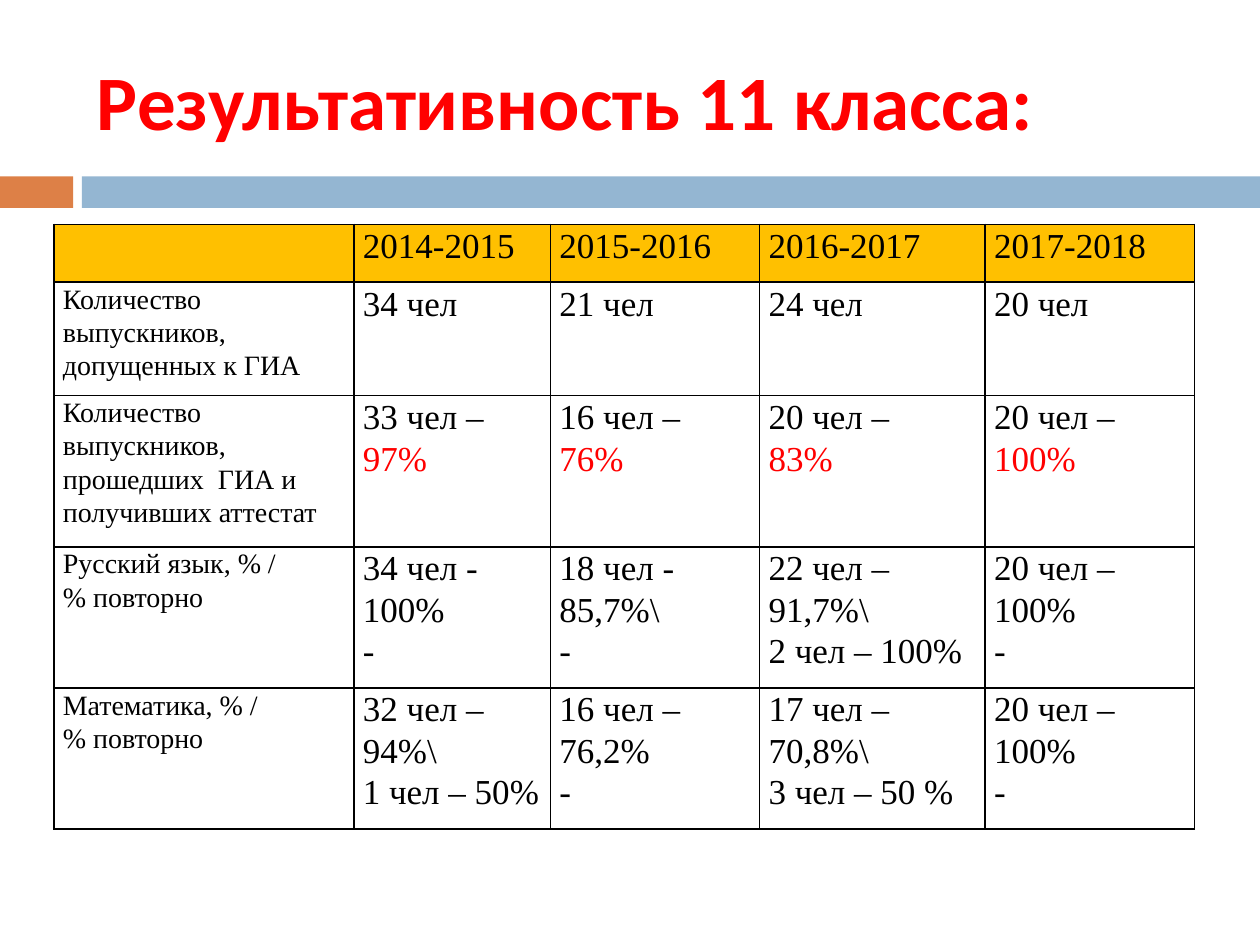
import dataclasses

import lxml.etree
import pptx
import pptx.dml.color
import pptx.enum.shapes
import pptx.enum.text
import pptx.oxml.ns
import pptx.util


@dataclasses.dataclass(frozen=True)
class Theme:
    heading_font: str = "Calibri"
    body_font: str = "Times New Roman"
    title_size: int = 44
    value_size: int = 20
    label_size: int = 16
    ink: str = "000000"
    accent: str = "FF0000"
    paper: str = "FFFFFF"
    header: str = "FFC000"
    orange: str = "DD8047"
    blue: str = "94B6D2"
    line_spacing: float = 1.07
    border_width: int = 1


class Deck:
    """Places elements on a grid of 100 columns by 75 rows."""

    COLUMNS, ROWS = 100, 75

    def __init__(self, theme):
        self.theme = theme
        self.presentation = pptx.Presentation()
        self.presentation.slide_width = pptx.util.Inches(10)
        self.presentation.slide_height = pptx.util.Inches(7.5)
        self.slide = self.presentation.slides.add_slide(self.presentation.slide_layouts[6])

    def across(self, columns):
        return round(self.presentation.slide_width * columns / self.COLUMNS)

    def down(self, rows):
        return round(self.presentation.slide_height * rows / self.ROWS)

    def box(self, left, top, width, height):
        return self.across(left), self.down(top), self.across(width), self.down(height)

    def run(self, paragraph, words, font, size, color, bold=False):
        run = paragraph.add_run()
        run.text = words
        run.font.name = font
        run.font.size = pptx.util.Pt(size)
        run.font.bold = bold
        run.font.color.rgb = pptx.dml.color.RGBColor.from_string(color)

    def band(self, left, top, width, height, color):
        band = self.slide.shapes.add_shape(
            pptx.enum.shapes.MSO_SHAPE.RECTANGLE, *self.box(left, top, width, height))
        band.shadow.inherit = False
        band.fill.solid()
        band.fill.fore_color.rgb = pptx.dml.color.RGBColor.from_string(color)
        band.line.fill.background()

    def title(self, left, top, width, height, words):
        frame = self.slide.shapes.add_textbox(*self.box(left, top, width, height)).text_frame
        frame.word_wrap = True
        frame.vertical_anchor = pptx.enum.text.MSO_ANCHOR.MIDDLE
        self.run(frame.paragraphs[0], words, self.theme.heading_font,
                 self.theme.title_size, self.theme.accent, bold=True)

    def table(self, left, top, widths, heights, records):
        table = self.slide.shapes.add_table(
            len(heights), len(widths), *self.box(left, top, sum(widths), sum(heights))).table
        table.first_row = table.horz_banding = False
        for column, width in zip(table.columns, widths):
            column.width = self.across(width)
        for row, height in zip(table.rows, heights):
            row.height = self.down(height)
        for r, record in enumerate(records):
            for c, content in enumerate(record):
                cell = table.cell(r, c)
                self.borders(cell)
                cell.fill.solid()
                cell.fill.fore_color.rgb = pptx.dml.color.RGBColor.from_string(
                    self.theme.paper if r else self.theme.header)
                self.cell_text(cell, content,
                               self.theme.value_size if c else self.theme.label_size)

    def cell_text(self, cell, content, size):
        """Each line is a paragraph; what follows a bar is in the accent colour."""
        cell.margin_left = cell.margin_right = self.across(0.7)
        cell.margin_top = cell.margin_bottom = 0
        for number, line in enumerate(content.split("\n")):
            frame = cell.text_frame
            paragraph = frame.add_paragraph() if number else frame.paragraphs[0]
            paragraph.line_spacing = self.theme.line_spacing
            plain, _, marked = line.partition("|")
            for words, color in ((plain, self.theme.ink), (marked, self.theme.accent)):
                if words:
                    self.run(paragraph, words, self.theme.body_font, size, color)

    def borders(self, cell):
        properties = cell._tc.get_or_add_tcPr()
        for side in ("a:lnL", "a:lnR", "a:lnT", "a:lnB"):
            line = lxml.etree.SubElement(properties, pptx.oxml.ns.qn(side),
                                         w=str(pptx.util.Pt(self.theme.border_width)))
            fill = lxml.etree.SubElement(line, pptx.oxml.ns.qn("a:solidFill"))
            lxml.etree.SubElement(fill, pptx.oxml.ns.qn("a:srgbClr"), val=self.theme.ink)


RESULTS = [
    ["", "2014-2015", "2015-2016", "2016-2017", "2017-2018"],
    ["Количество выпускников, допущенных к ГИА",
     "34 чел", "21 чел", "24 чел", "20 чел"],
    ["Количество выпускников, прошедших  ГИА и получивших аттестат",
     "33 чел – |97%", "16 чел – |76%", "20 чел –\n|83%", "20 чел – |100%"],
    ["Русский язык, % /\n% повторно",
     "34 чел - 100%\n-", "18 чел - 85,7%\\\n-",
     "22 чел – 91,7%\\\n2 чел – 100%", "20 чел – 100%\n-"],
    ["Математика, % /\n% повторно",
     "32 чел – 94%\\\n1 чел – 50%", "16 чел – 76,2%\n-",
     "17 чел – 70,8%\\\n3 чел – 50 %", "20 чел – 100%\n-"],
]


def main():
    theme = Theme()
    deck = Deck(theme)
    deck.band(0, 14, 5.8, 2.5, theme.orange)
    deck.band(6.5, 14, 93.5, 2.5, theme.blue)
    deck.title(6.7, 2.5, 89.2, 10.8, "Результативность 11 класса:")
    deck.table(4.3, 17.8, [23.8, 15.6, 16.6, 17.9, 16.6], [4.6, 9, 12, 11.2, 11.2], RESULTS)
    deck.presentation.save("out.pptx")


if __name__ == "__main__":
    main()
